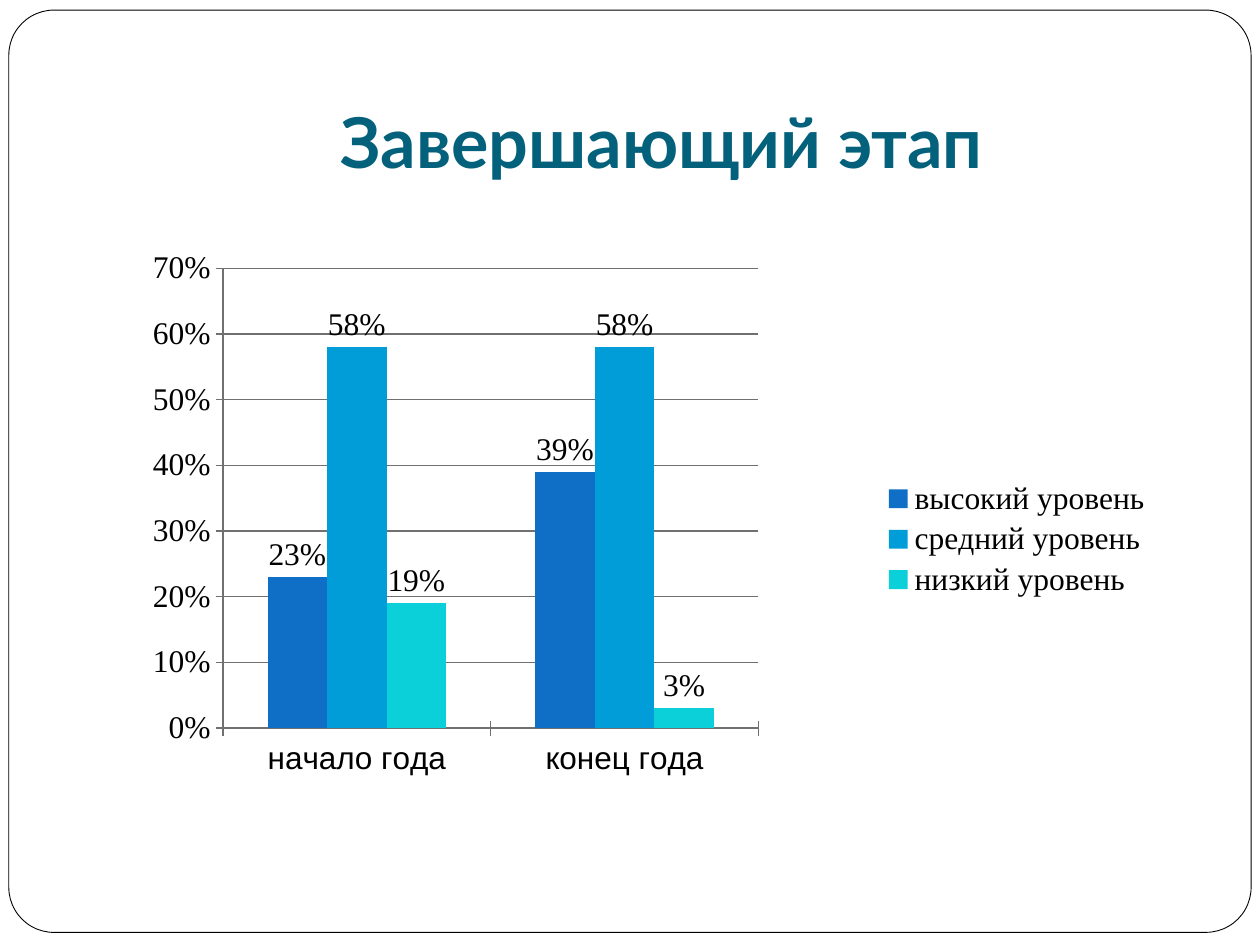
"""Build the final-stage slide with a clustered column chart of levels."""
from dataclasses import dataclass
from typing import Any

import pptx
import pptx.chart.data
import pptx.dml.color
import pptx.enum.chart
import pptx.enum.shapes
import pptx.enum.text
import pptx.oxml
import pptx.oxml.ns
import pptx.util
from pptx.util import Inches


@dataclass
class Level:
    name: str
    shares: tuple[float, ...]
    color: str


@dataclass
class Area:
    left: float
    top: float
    width: float
    height: float

    def lengths(self) -> tuple[int, ...]:
        return tuple(Inches(v) for v in (self.left, self.top, self.width, self.height))


PERIODS = ("начало года", "конец года")
LEVELS = (
    Level("высокий уровень", (0.23, 0.39), "0F6FC6"),
    Level("средний уровень", (0.58, 0.58), "009DD9"),
    Level("низкий уровень", (0.19, 0.03), "0BD0D9"),
)
FRAME = Area(0.07, 0.08, 9.86, 7.32)
TITLE = Area(1, 0.3, 8.5, 1.25)
CHART = Area(0.75, 1.78, 8.5, 5)
PLOT = Area(0.12, 0.07, 0.5, 0.73)
GRAY = "707070"


def rgb(value: str) -> pptx.dml.color.RGBColor:
    return pptx.dml.color.RGBColor.from_string(value)


def apply_format(target: Any, values: dict[str, Any]) -> None:
    for name, value in values.items():
        setattr(target, name, value)


def paint(fill: Any, color: str) -> None:
    fill.solid()
    fill.fore_color.rgb = rgb(color)


def style_line(line: Any, color: str, points: float) -> None:
    line.color.rgb = rgb(color)
    line.width = pptx.util.Pt(points)


def style_font(font: Any, name: str, size: float, color: str, bold: bool = False) -> None:
    apply_format(font, {"name": name, "size": pptx.util.Pt(size), "bold": bold})
    font.color.rgb = rgb(color)


def draw_frame(page: Any) -> None:
    frame = page.shapes.add_shape(
        pptx.enum.shapes.MSO_SHAPE.ROUNDED_RECTANGLE, *FRAME.lengths()
    )
    frame.adjustments[0] = 0.049
    frame.shadow.inherit = False
    paint(frame.fill, "FFFFFF")
    style_line(frame.line, "000000", 0.5)
    page.shapes.element.insert(2, frame.element)


def draw_title(page: Any, wording: str) -> None:
    box = page.shapes.title
    apply_format(box, dict(zip(("left", "top", "width", "height"), TITLE.lengths())))
    apply_format(box.text_frame, {
        "word_wrap": True,
        "vertical_anchor": pptx.enum.text.MSO_ANCHOR.BOTTOM,
        "margin_left": Inches(0.1),
        "margin_right": Inches(0.1),
        "margin_top": Inches(0.05),
        "margin_bottom": Inches(0.1),
    })
    para = box.text_frame.paragraphs[0]
    para.alignment = pptx.enum.text.PP_ALIGN.CENTER
    span = para.add_run()
    span.text = wording
    style_font(span.font, "Lato", 40, "04617B", True)


def place_plot(chart: Any) -> None:
    places = {"x": PLOT.left, "y": PLOT.top, "w": PLOT.width, "h": PLOT.height}
    sizes = "".join(f'<c:{key} val="{value}"/>' for key, value in places.items())
    layout = pptx.oxml.parse_xml(
        f'<c:layout {pptx.oxml.ns.nsdecls("c")}><c:manualLayout>'
        '<c:layoutTarget val="inner"/><c:xMode val="edge"/><c:yMode val="edge"/>'
        f"{sizes}</c:manualLayout></c:layout>"
    )
    plot_area = chart.element.find(".//" + pptx.oxml.ns.qn("c:plotArea"))
    for old in plot_area.findall(pptx.oxml.ns.qn("c:layout")):
        plot_area.remove(old)
    plot_area.insert(0, layout)


def style_axes(chart: Any) -> None:
    for axis, font in ((chart.category_axis, "Arial"), (chart.value_axis, "Times New Roman")):
        axis.major_tick_mark = pptx.enum.chart.XL_TICK_MARK.CROSS
        style_font(axis.tick_labels.font, font, 18, "000000")
        style_line(axis.format.line, GRAY, 0.75)
    apply_format(chart.value_axis, {
        "minimum_scale": 0, "maximum_scale": 0.7, "major_unit": 0.1,
        "has_major_gridlines": True,
    })
    style_line(chart.value_axis.major_gridlines.format.line, GRAY, 0.75)
    apply_format(chart.value_axis.tick_labels,
                 {"number_format": "0%", "number_format_is_linked": False})


def draw_chart(page: Any) -> None:
    data = pptx.chart.data.CategoryChartData(number_format="0%")
    data.categories = PERIODS
    for level in LEVELS:
        data.add_series(level.name, level.shares)
    chart = page.shapes.add_chart(
        pptx.enum.chart.XL_CHART_TYPE.COLUMN_CLUSTERED, *CHART.lengths(), data
    ).chart
    apply_format(chart, {"has_title": False, "has_legend": True})
    style_font(chart.font, "Times New Roman", 18, "000000")
    apply_format(chart.legend, {
        "position": pptx.enum.chart.XL_LEGEND_POSITION.RIGHT, "include_in_layout": False,
    })
    apply_format(chart.plots[0], {"gap_width": 150, "overlap": 0, "vary_by_categories": False})
    for series, level in zip(chart.plots[0].series, LEVELS):
        paint(series.format.fill, level.color)
        apply_format(series.data_labels, {
            "show_value": True, "number_format": "0%", "number_format_is_linked": False,
            "position": pptx.enum.chart.XL_LABEL_POSITION.OUTSIDE_END,
        })
    style_axes(chart)
    place_plot(chart)


def main() -> None:
    deck = pptx.Presentation()
    apply_format(deck, {"slide_width": Inches(10), "slide_height": Inches(7.5)})
    page = deck.slides.add_slide(deck.slide_layouts.get_by_name("Title Only"))
    draw_frame(page)
    draw_title(page, "Завершающий этап")
    draw_chart(page)
    deck.save("out.pptx")


if __name__ == "__main__":
    main()
